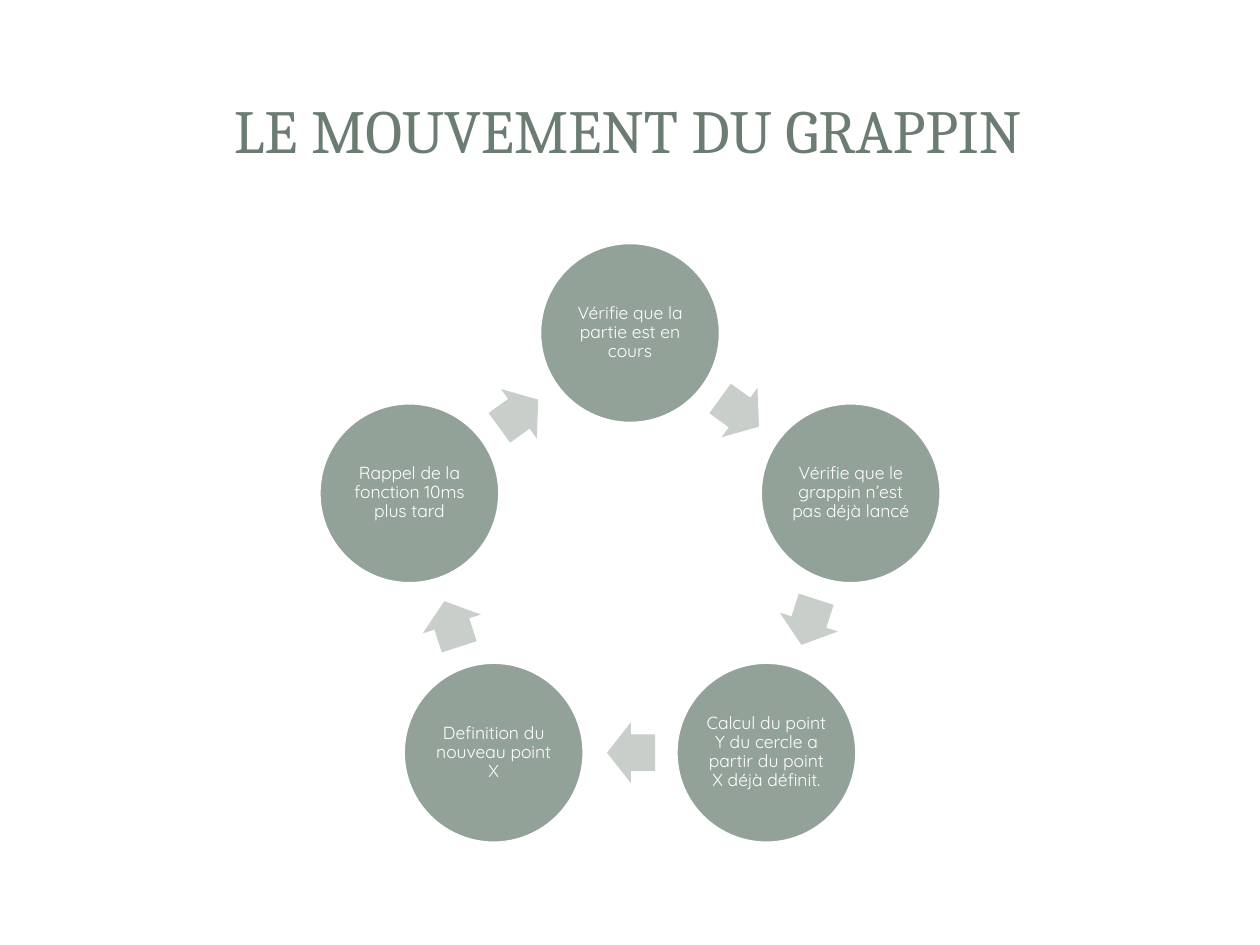
from dataclasses import dataclass
from math import cos, radians, sin

from pptx import Presentation
from pptx.dml.color import RGBColor
from pptx.enum.shapes import MSO_SHAPE
from pptx.enum.text import MSO_ANCHOR, MSO_AUTO_SIZE, PP_ALIGN
from pptx.util import Emu, Pt

TITLE = "LE MOUVEMENT DU GRAPPIN"
STEPS = [
    "Vérifie que la partie est en cours",
    "Vérifie que le grappin n’est pas déjà lancé",
    "Calcul du point Y du cercle a partir du point X déjà définit.",
    "Definition du nouveau point X",
    "Rappel de la fonction 10ms plus tard",
]


@dataclass(frozen=True)
class Theme:
    background: str = "FFFFFF"
    title: str = "6B7D72"
    circle: str = "93A299"
    arrow: str = "C8CECA"
    label: str = "FFFFFF"
    title_font: str = "Cambria"
    label_font: str = "Quicksand"
    title_size: int = 35
    label_size: int = 10
    outline: int = 2


THEME = Theme()
PIXELS_PER_INCH = 126
SLIDE_SIZE = (1260, 945)
TITLE_BOX = (59, 57, 1138, 144)
CYCLE_CENTER = (630, 565)
CYCLE_RADIUS = 232
CIRCLE_SIZE = (181, 181)
ARROW_SIZE = (48, 61)
ARROW_LAG = 1
LABEL_INSET = 1


def px(value):
    return Emu(round(value * 914400 / PIXELS_PER_INCH))


def apply(target, values):
    for name, value in values.items():
        setattr(target, name, value)


def place(shape, left, top, width, height):
    apply(shape, {"left": px(left), "top": px(top), "width": px(width), "height": px(height)})


def write(shape, text, font_name, size, color, inset=None, line_spacing=None):
    frame = shape.text_frame
    frame.text = text
    apply(frame, {"word_wrap": True, "auto_size": MSO_AUTO_SIZE.NONE,
                  "vertical_anchor": MSO_ANCHOR.MIDDLE})
    if inset is not None:
        sides = ("margin_left", "margin_top", "margin_right", "margin_bottom")
        apply(frame, dict.fromkeys(sides, px(inset)))
    paragraph = frame.paragraphs[0]
    apply(paragraph, {"alignment": PP_ALIGN.CENTER, "line_spacing": line_spacing})
    font = paragraph.runs[0].font
    apply(font, {"name": font_name, "size": Pt(size)})
    font.color.rgb = RGBColor.from_string(color)


def add_centered(slide, kind, center, size, color):
    corner = [middle - length / 2 for middle, length in zip(center, size)]
    shape = slide.shapes.add_shape(kind, *map(px, (*corner, *size)))
    shape.shadow.inherit = False
    shape.fill.solid()
    shape.fill.fore_color.rgb = RGBColor.from_string(color)
    return shape


def add_step(slide, center, text):
    circle = add_centered(slide, MSO_SHAPE.OVAL, center, CIRCLE_SIZE, THEME.circle)
    circle.line.color.rgb = RGBColor.from_string(THEME.background)
    circle.line.width = Pt(THEME.outline)
    write(circle, text, THEME.label_font, THEME.label_size, THEME.label, LABEL_INSET, 0.9)


def add_arrow(slide, start, end, rotation):
    angle = radians(rotation)
    center = ((start[0] + end[0]) / 2 - ARROW_LAG * cos(angle),
              (start[1] + end[1]) / 2 - ARROW_LAG * sin(angle))
    arrow = add_centered(slide, MSO_SHAPE.RIGHT_ARROW, center, ARROW_SIZE, THEME.arrow)
    arrow.adjustments[0] = 0.6
    arrow.adjustments[1] = 0.5
    arrow.rotation = rotation
    arrow.line.fill.background()


def cycle_point(index, step_angle):
    angle = radians(index * step_angle)
    return (CYCLE_CENTER[0] + CYCLE_RADIUS * sin(angle),
            CYCLE_CENTER[1] - CYCLE_RADIUS * cos(angle))


def main():
    presentation = Presentation()
    apply(presentation, dict(zip(("slide_width", "slide_height"), map(px, SLIDE_SIZE))))
    slide = presentation.slides.add_slide(presentation.slide_layouts[5])
    slide.background.fill.solid()
    slide.background.fill.fore_color.rgb = RGBColor.from_string(THEME.background)

    title = slide.shapes.title
    place(title, *TITLE_BOX)
    write(title, TITLE, THEME.title_font, THEME.title_size, THEME.title)

    step_angle = 360 / len(STEPS)
    for index, text in enumerate(STEPS):
        center = cycle_point(index, step_angle)
        add_step(slide, center, text)
        add_arrow(slide, center, cycle_point(index + 1, step_angle), (index + 0.5) * step_angle)

    presentation.save("out.pptx")


if __name__ == "__main__":
    main()
